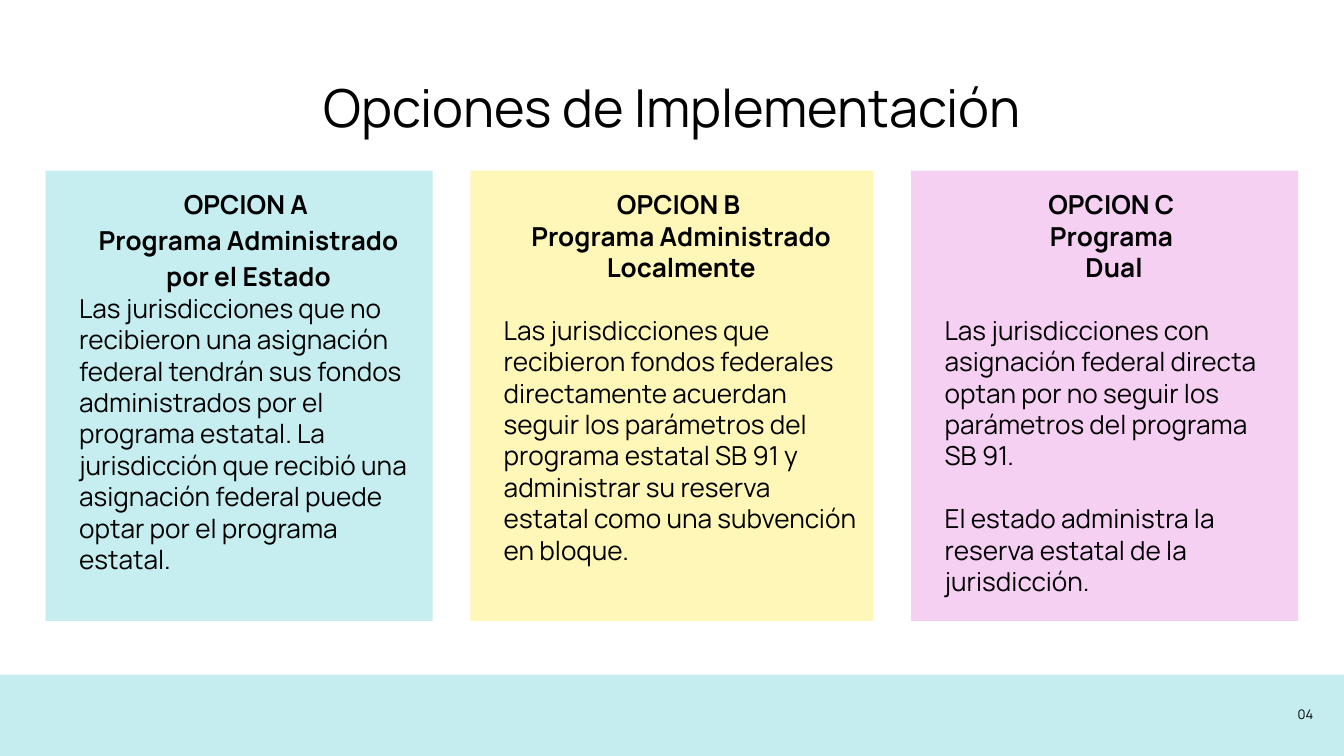
from dataclasses import dataclass

from lxml import etree
from pptx import Presentation
from pptx.dml.color import RGBColor
from pptx.enum.shapes import MSO_SHAPE
from pptx.enum.text import MSO_ANCHOR, PP_ALIGN
from pptx.oxml.ns import qn
from pptx.util import Inches, Pt

RECT = MSO_SHAPE.RECTANGLE
TOP, MIDDLE = MSO_ANCHOR.TOP, MSO_ANCHOR.MIDDLE
LEFT, CENTER, RIGHT = PP_ALIGN.LEFT, PP_ALIGN.CENTER, PP_ALIGN.RIGHT

FONT = "Manrope"
COLORS = {
    "text": "000000",
    "band": "C5ECEF",
    "aqua": "C6EDEF",
    "yellow": "FFF391",
    "pink": "F0B7EE",
}

# Page grid, in inches
WIDTH = 10
HEIGHT = WIDTH * 9 / 16
MARGIN = 0.34
CONTENT = WIDTH - 2 * MARGIN
CARD_TOP, CARD_HEIGHT = 1.27, 3.35
BAND_TOP = 5.02
INSET = 0.1
CARD_RIGHT_INSET = 0.11
INDENT = 0.15
BLANK_LINE = 16.8  # points, one line of card text


@dataclass
class Line:
    text: str
    size: float = 14
    bold: bool = False
    align: PP_ALIGN = LEFT
    spacing: float = 1.0
    before: float = 0
    indent: float = 0


@dataclass
class Card:
    width: float
    color: str
    alpha: int  # percent
    lines: list[Line]


def heading(text: str, spacing: float = 1.0) -> Line:
    return Line(text, bold=True, align=CENTER, spacing=spacing, indent=INDENT)


def body(text: str, before: float = 0) -> Line:
    return Line(text, before=before, indent=INDENT)


CARDS = [
    Card(2.88, "aqua", 100, [
        heading("OPCION A ", 1.15),
        heading("Programa Administrado por el Estado", 1.15),
        body("Las jurisdicciones que no recibieron una asignación federal "
             "tendrán sus fondos administrados por el programa estatal. "
             "La jurisdicción que recibió una asignación federal puede "
             "optar por el programa estatal."),
    ]),
    Card(3, "yellow", 65, [
        heading("OPCION B ", 1.15),
        heading("Programa Administrado Localmente"),
        body("Las jurisdicciones que recibieron fondos federales "
             "directamente acuerdan seguir los parámetros del programa "
             "estatal SB 91 y administrar su reserva estatal como una "
             "subvención en bloque.", BLANK_LINE),
    ]),
    Card(2.88, "pink", 65, [
        heading("OPCION C ", 1.15),
        heading("Programa "),
        heading("Dual"),
        body("Las jurisdicciones con asignación federal directa optan por "
             "no seguir los parámetros del programa SB 91.", BLANK_LINE),
        body("El estado administra la reserva estatal de la jurisdicción.",
             BLANK_LINE),
    ]),
]


def write(shape, lines: list[Line], anchor: MSO_ANCHOR = TOP,
          right_inset: float = INSET) -> None:
    frame = shape.text_frame
    frame.word_wrap = True
    frame.vertical_anchor = anchor
    frame.margin_left = frame.margin_top = frame.margin_bottom = Inches(INSET)
    frame.margin_right = Inches(right_inset)
    for index, line in enumerate(lines):
        para = frame.add_paragraph() if index else frame.paragraphs[0]
        para.alignment = line.align
        para.line_spacing = line.spacing
        para.space_before = Pt(line.before)
        if line.indent:
            para._p.get_or_add_pPr().set("marL", str(Inches(line.indent)))
        span = para.add_run()
        span.text = line.text
        span.font.name = FONT
        span.font.size = Pt(line.size)
        span.font.bold = line.bold
        span.font.color.rgb = RGBColor.from_string(COLORS["text"])


def add_panel(page, left: float, top: float, width: float, height: float,
              color: str, alpha: int = 100):
    panel = page.shapes.add_shape(
        RECT, Inches(left), Inches(top), Inches(width), Inches(height))
    panel.shadow.inherit = False
    panel.line.fill.background()
    panel.fill.solid()
    panel.fill.fore_color.rgb = RGBColor.from_string(COLORS[color])
    if alpha < 100:
        tint = panel._element.spPr.find(qn("a:solidFill"))[0]
        etree.SubElement(tint, qn("a:alpha"), val=str(alpha * 1000))
    return panel


def add_text(page, left: float, top: float, width: float, height: float,
             line: Line, anchor: MSO_ANCHOR = TOP) -> None:
    box = page.shapes.add_textbox(
        Inches(left), Inches(top), Inches(width), Inches(height))
    write(box, [line], anchor)


def add_cards(page, cards: list[Card]) -> None:
    gutter = (CONTENT - sum(card.width for card in cards)) / (len(cards) - 1)
    left = MARGIN
    for card in cards:
        panel = add_panel(page, left, CARD_TOP, card.width, CARD_HEIGHT,
                          card.color, card.alpha)
        write(panel, card.lines, right_inset=CARD_RIGHT_INSET)
        left += card.width + gutter


def main() -> None:
    deck = Presentation()
    deck.slide_width, deck.slide_height = Inches(WIDTH), Inches(HEIGHT)
    page = deck.slides.add_slide(deck.slide_layouts[6])

    # Footer band and page number
    add_panel(page, 0, BAND_TOP, WIDTH, HEIGHT - BAND_TOP, "band")
    add_text(page, 9.27, 5.1, 0.6, 0.43,
             Line("04", size=7, align=RIGHT), MIDDLE)

    # Title
    add_text(page, MARGIN, 0.46, CONTENT, 0.63,
             Line("Opciones de Implementación", size=28, align=CENTER))

    # Three options
    add_cards(page, CARDS)

    deck.save("out.pptx")


if __name__ == "__main__":
    main()
